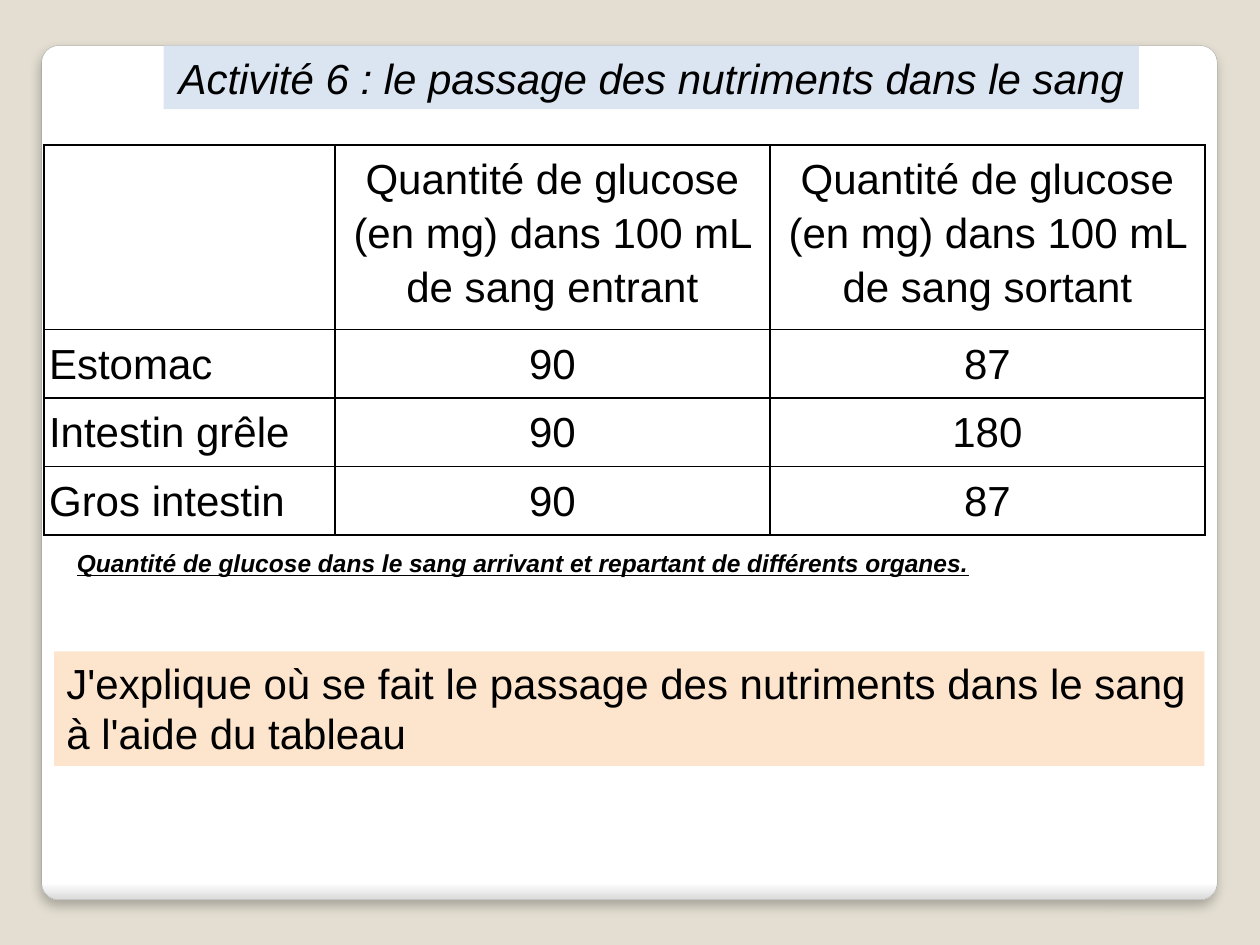
from lxml import etree
from pptx import Presentation
from pptx.dml.color import RGBColor
from pptx.enum.shapes import MSO_SHAPE
from pptx.enum.text import MSO_ANCHOR, PP_ALIGN
from pptx.oxml.ns import qn
from pptx.util import Cm, Pt

RECT, ROUNDED = MSO_SHAPE.RECTANGLE, MSO_SHAPE.ROUNDED_RECTANGLE
LEFT, CENTER = PP_ALIGN.LEFT, PP_ALIGN.CENTER
TOP, MIDDLE = MSO_ANCHOR.TOP, MSO_ANCHOR.MIDDLE

GLUCOSE = [
    ["", "Quantité de glucose (en mg) dans 100 mL de sang entrant",
     "Quantité de glucose (en mg) dans 100 mL de sang sortant"],
    ["Estomac", "90", "87"],
    ["Intestin grêle", "90", "180"],
    ["Gros intestin", "90", "87"],
]


def rgb(hex_color):
    return RGBColor.from_string(hex_color)


def write(frame, text, size=24, align=LEFT, anchor=TOP, wrap=True, spacing=None,
          bold=False, italic=False, underline=False):
    frame.word_wrap = wrap
    frame.vertical_anchor = anchor
    paragraph = frame.paragraphs[0]
    paragraph.alignment = align
    paragraph.line_spacing = spacing
    run = paragraph.add_run()
    run.text = text
    font = run.font
    font.name, font.size, font.color.rgb = "Arial", Pt(size), rgb("000000")
    font.bold, font.italic, font.underline = bold, italic, underline


def add_child(parent, tag, **attributes):
    return etree.SubElement(parent, qn(tag), attributes)


def add_panel(slide, box):
    """White rounded card, shaded at its foot, with a soft shadow."""
    panel = slide.shapes.add_shape(ROUNDED, *map(Cm, box))
    panel.adjustments[0] = 0.02
    panel.fill.gradient()
    panel.fill.gradient_angle = 270
    for stop, (position, color) in zip(panel.fill.gradient_stops,
                                       [(0.98, "FFFFFF"), (1, "DADADA")]):
        stop.position = position
        stop.color.rgb = rgb(color)
    panel.line.color.rgb = rgb("A4A4A4")
    panel.line.width = Pt(0.16)
    panel.shadow.inherit = False
    effects = panel._element.spPr.find(qn("a:effectLst"))
    shadow = add_child(effects, "a:outerShdw", blurRad=str(Pt(6)), dist=str(Pt(4)),
                       dir="5400000", algn="t", rotWithShape="0")
    shade = add_child(shadow, "a:srgbClr", val="000000")
    add_child(shade, "a:alpha", val="25000")


def add_banner(slide, box, text, color, **text_format):
    """Plain coloured rectangle with text."""
    banner = slide.shapes.add_shape(RECT, *map(Cm, box))
    banner.shadow.inherit = False
    banner.fill.solid()
    banner.fill.fore_color.rgb = rgb(color)
    banner.line.fill.background()
    write(banner.text_frame, text, **text_format)


def add_caption(slide, box, text):
    caption = slide.shapes.add_textbox(*map(Cm, box))
    write(caption.text_frame, text, size=14, anchor=MIDDLE, wrap=False,
          bold=True, italic=True, underline=True)


def add_borders(cell):
    properties = cell._tc.get_or_add_tcPr()
    for index, side in enumerate(("a:lnL", "a:lnR", "a:lnT", "a:lnB")):
        border = etree.Element(qn(side), w=str(Pt(1)))
        properties.insert(index, border)
        fill = add_child(border, "a:solidFill")
        add_child(fill, "a:srgbClr", val="000000")


def add_glucose_table(slide, box, rows):
    """Organ names on the left, centred glucose values, black grid."""
    left, top, width, height = box
    organ_width, header_height = 5.86, 3.72
    value_width = (width - organ_width) / (len(rows[0]) - 1)
    row_height = (height - header_height) / (len(rows) - 1)
    table = slide.shapes.add_table(len(rows), len(rows[0]), *map(Cm, box)).table
    table.first_row = table.horz_banding = False
    for c, column in enumerate(table.columns):
        column.width = Cm(value_width if c else organ_width)
    for r, row in enumerate(table.rows):
        row.height = Cm(row_height if r else header_height)
        for c, text in enumerate(rows[r]):
            cell = table.cell(r, c)
            cell.margin_left = cell.margin_right = Cm(0.1)
            cell.margin_top = cell.margin_bottom = Cm(0.1)
            cell.fill.background()
            add_borders(cell)
            if text:
                write(cell.text_frame, text, align=CENTER if c else LEFT, spacing=1.15)


def main():
    deck = Presentation()
    deck.slide_width, deck.slide_height = Cm(25.4), Cm(19.05)
    slide = deck.slides.add_slide(deck.slide_layouts[6])
    slide.background.fill.solid()
    slide.background.fill.fore_color.rgb = rgb("E3DED1")

    add_panel(slide, (0.84, 0.92, 23.7, 17.22))
    add_banner(slide, (3.3, 0.92, 19.66, 1.28),
               "Activité 6 : le passage des nutriments dans le sang", "DBE5F1",
               align=CENTER, anchor=MIDDLE, wrap=False, italic=True)
    add_glucose_table(slide, (0.89, 2.92, 23.4, 7.86), GLUCOSE)
    add_caption(slide, (1.3, 10.92, 18.54, 0.86),
                "Quantité de glucose dans le sang arrivant et repartant "
                "de différents organes.")
    add_banner(slide, (1.09, 13.13, 23.19, 2.31),
               "J'explique où se fait le passage des nutriments dans le sang "
               "à l'aide du tableau", "FDE5CD")
    deck.save("out.pptx")


if __name__ == "__main__":
    main()
